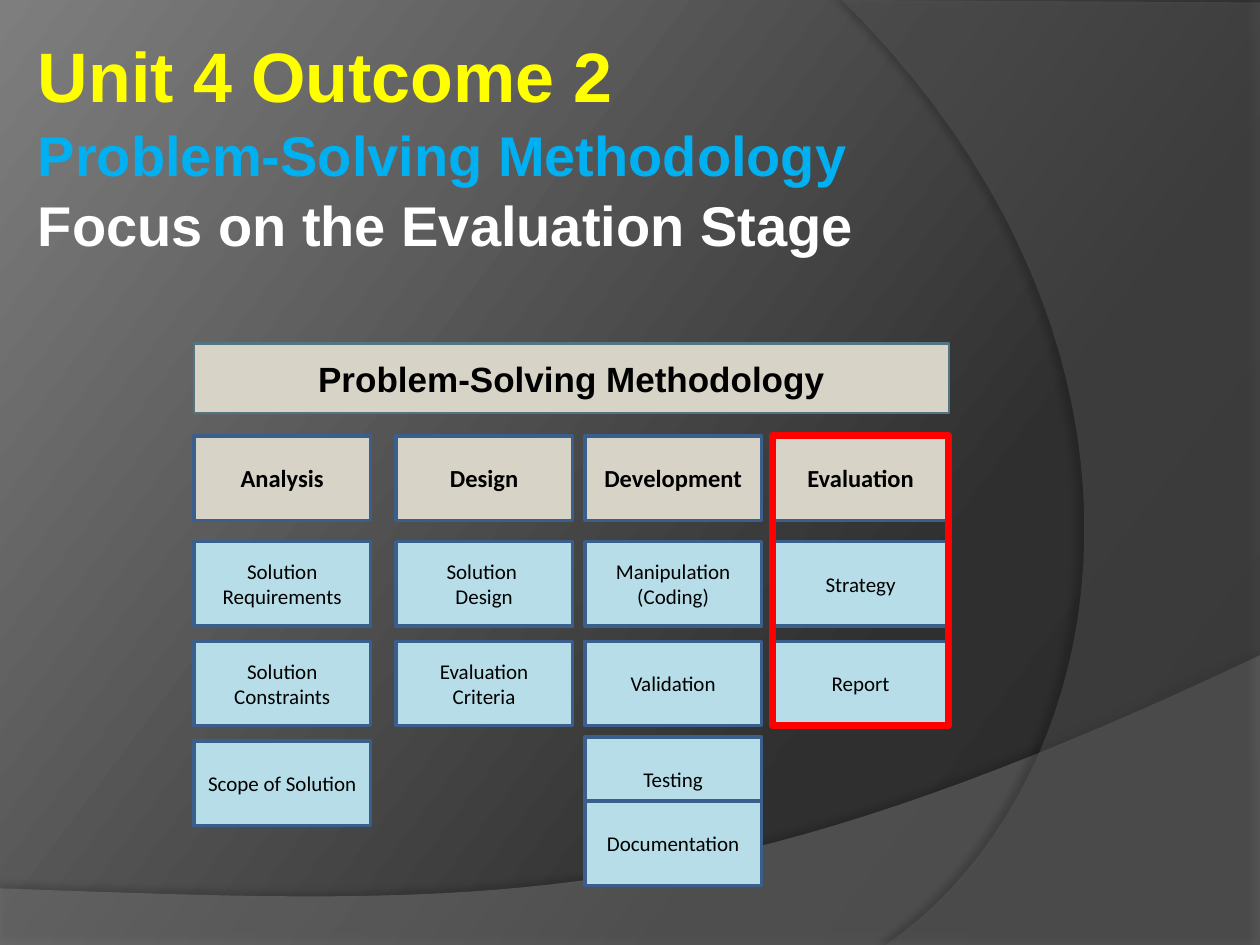
import copy

import pptx
import pptx.dml.color
import pptx.enum.shapes
import pptx.enum.text
import pptx.oxml
import pptx.oxml.ns
import pptx.util

COLOURS = {
    "yellow": "FFFF00", "sky": "00B0F0", "white": "FFFFFF", "black": "000000",
    "sand": "D8D3C7", "ice": "B7DEE8", "navy": "3A5F8C", "teal": "517682",
    "red": "FF0000", "swoosh": "7F7F7F", "arc": "5E5E5E",
    "night": "282828", "dusk": "2F2F2F", "haze": "7E7E7E",
}
COLUMNS = [3.91, 7.98, 11.79, 15.57]
STAGE_TOP = 8.79
ROWS = [10.92, 12.93]
BOX_WIDTH, BOX_HEIGHT = 3.56, 1.7
FULL_WIDTH = COLUMNS[-1] + BOX_WIDTH - COLUMNS[0]

STAGE = {"size": pptx.util.Pt(14), "name": "Calibri", "bold": True}
STEP = {"size": pptx.util.Pt(12), "name": "Calibri", "bold": False}
BANNER = {"size": pptx.util.Pt(20), "name": "Arial", "bold": True}

STAGES = [
    ("Analysis", ["Solution Requirements", "Solution Constraints"]),
    ("Design", ["Solution \nDesign", "Evaluation\nCriteria"]),
    ("Development", ["Manipulation\n(Coding)", "Validation"]),
    ("Evaluation", ["Strategy", "Report"]),
]
EXTRA_STEPS = [
    (0, 14.94, "Scope of Solution"),
    (2, 14.86, "Testing"),
    (2, 16.15, "Documentation"),
]


def rgb(name):
    return pptx.dml.color.RGBColor.from_string(COLOURS[name])


def curve(start, first, second, end, steps=40):
    points = []
    for step in range(steps + 1):
        t = step / steps
        weights = ((1 - t) ** 3, 3 * t * (1 - t) ** 2, 3 * t * t * (1 - t), t ** 3)
        points.append(tuple(
            sum(weight * value for weight, value in zip(weights, values))
            for values in zip(start, first, second, end)))
    return points


class Painter:
    def __init__(self, deck):
        self.slide = deck.slides.add_slide(deck.slide_layouts[5])

    def background(self, stops, angle):
        fill = self.slide.background.fill
        fill.gradient()
        fill.gradient_angle = angle
        stop_list = self.slide.element.find(".//" + pptx.oxml.ns.qn("a:gsLst"))
        stop_list.append(copy.deepcopy(stop_list[0]))
        for stop, (position, colour) in zip(fill.gradient_stops, stops):
            stop.position = position
            stop.color.rgb = rgb(colour)

    def backdrop(self, points, colour, opacity, shadow):
        start, *rest = [(pptx.util.Cm(x), pptx.util.Cm(y)) for x, y in points]
        builder = self.slide.shapes.build_freeform(*start)
        builder.add_line_segments(rest, close=True)
        shape = builder.convert_to_shape()
        shape.fill.solid()
        shape.fill.fore_color.rgb = rgb(colour)
        shape.line.fill.background()
        shape.shadow.inherit = False
        properties = shape.element.spPr
        namespace = pptx.oxml.ns.nsdecls("a")
        alpha = f'<a:alpha {namespace} val="{opacity * 1000}"/>'
        properties.find(".//" + pptx.oxml.ns.qn("a:srgbClr")).append(
            pptx.oxml.parse_xml(alpha))
        shade, blur, distance, direction = shadow
        properties.find(pptx.oxml.ns.qn("a:effectLst")).append(pptx.oxml.parse_xml(
            f'<a:outerShdw {namespace} blurRad="{pptx.util.Pt(blur)}" '
            f'dist="{pptx.util.Pt(distance)}" dir="{direction * 60000}" '
            f'rotWithShape="0"><a:srgbClr val="{COLOURS["black"]}">'
            f'<a:alpha val="{shade * 1000}"/></a:srgbClr></a:outerShdw>'))

    def fill_text(self, frame, lines, alignment, space_before=0):
        for index, (text, colour, style) in enumerate(lines):
            para = frame.add_paragraph() if index else frame.paragraphs[0]
            para.alignment = alignment
            para.space_before = pptx.util.Pt(space_before)
            span = para.add_run()
            span.text = text
            span.font.color.rgb = rgb(colour)
            for name, value in style.items():
                setattr(span.font, name, value)

    def title(self, left, top, width, height, lines):
        title = self.slide.shapes.title
        title.element.getparent().append(title.element)
        place = {"left": left, "top": top, "width": width, "height": height}
        for name, value in place.items():
            setattr(title, name, pptx.util.Cm(value))
        frame = title.text_frame
        frame.word_wrap = True
        frame.auto_size = pptx.enum.text.MSO_AUTO_SIZE.NONE
        frame.vertical_anchor = pptx.enum.text.MSO_ANCHOR.TOP
        self.fill_text(frame, lines, pptx.enum.text.PP_ALIGN.LEFT, 2)

    def box(self, left, top, width, height, line, weight,
            fill=None, text=None, style=None):
        box = self.slide.shapes.add_shape(
            pptx.enum.shapes.MSO_SHAPE.RECTANGLE,
            *[pptx.util.Cm(value) for value in (left, top, width, height)])
        box.shadow.inherit = False
        box.line.color.rgb = rgb(line)
        box.line.width = pptx.util.Pt(weight)
        if fill:
            box.fill.solid()
            box.fill.fore_color.rgb = rgb(fill)
        else:
            box.fill.background()
        if text:
            frame = box.text_frame
            frame.word_wrap = True
            frame.vertical_anchor = pptx.enum.text.MSO_ANCHOR.MIDDLE
            lines = [(part, "black", style) for part in text.split("\n")]
            self.fill_text(frame, lines, pptx.enum.text.PP_ALIGN.CENTER)

    def cell(self, column, top, text, fill="ice", style=STEP):
        self.box(COLUMNS[column], top, BOX_WIDTH, BOX_HEIGHT, "navy", 2,
                 fill, text, style)


def main():
    deck = pptx.Presentation()
    deck.slide_width, deck.slide_height = pptx.util.Cm(25.4), pptx.util.Cm(19.05)
    painter = Painter(deck)

    painter.background([(0, "night"), (0.3, "dusk"), (1, "haze")], 143)
    painter.backdrop(
        [(0, 17.91), (0, 19.05), (25.4, 19.05)]
        + curve((25.4, 13.21), (14.2, 18.52), (9.93, 18.26), (0, 17.91)),
        "swoosh", 45, (35, 4, 3.5, 270))
    painter.backdrop(
        [(25.4, 0.05), (25.4, 19.05)]
        + curve((17.86, 19.05), (22.63, 15.72), (24.05, 6.99), (16.97, 0)),
        "arc", 40, (45, 4, 4, 180))

    heading = {"name": "Arial", "bold": True}
    large = {**heading, "size": pptx.util.Pt(40)}
    medium = {**heading, "size": pptx.util.Pt(32)}
    painter.title(0.51, 0.53, 24.89, 6.07, [
        ("Unit 4 Outcome 2", "yellow", large),
        ("Problem-Solving Methodology", "sky", medium),
        ("Focus on the Evaluation Stage", "white", medium),
    ])

    painter.box(COLUMNS[0], 6.93, FULL_WIDTH, 1.4, "teal", 1.5,
                "sand", "Problem-Solving Methodology", BANNER)
    for column, (stage, steps) in enumerate(STAGES):
        painter.cell(column, STAGE_TOP, stage, "sand", STAGE)
        for top, step in zip(ROWS, steps):
            painter.cell(column, top, step)
    for column, top, step in EXTRA_STEPS:
        painter.cell(column, top, step)
    painter.box(COLUMNS[-1], STAGE_TOP, BOX_WIDTH,
                ROWS[-1] + BOX_HEIGHT - STAGE_TOP, "red", 4)

    deck.save("out.pptx")


if __name__ == "__main__":
    main()
